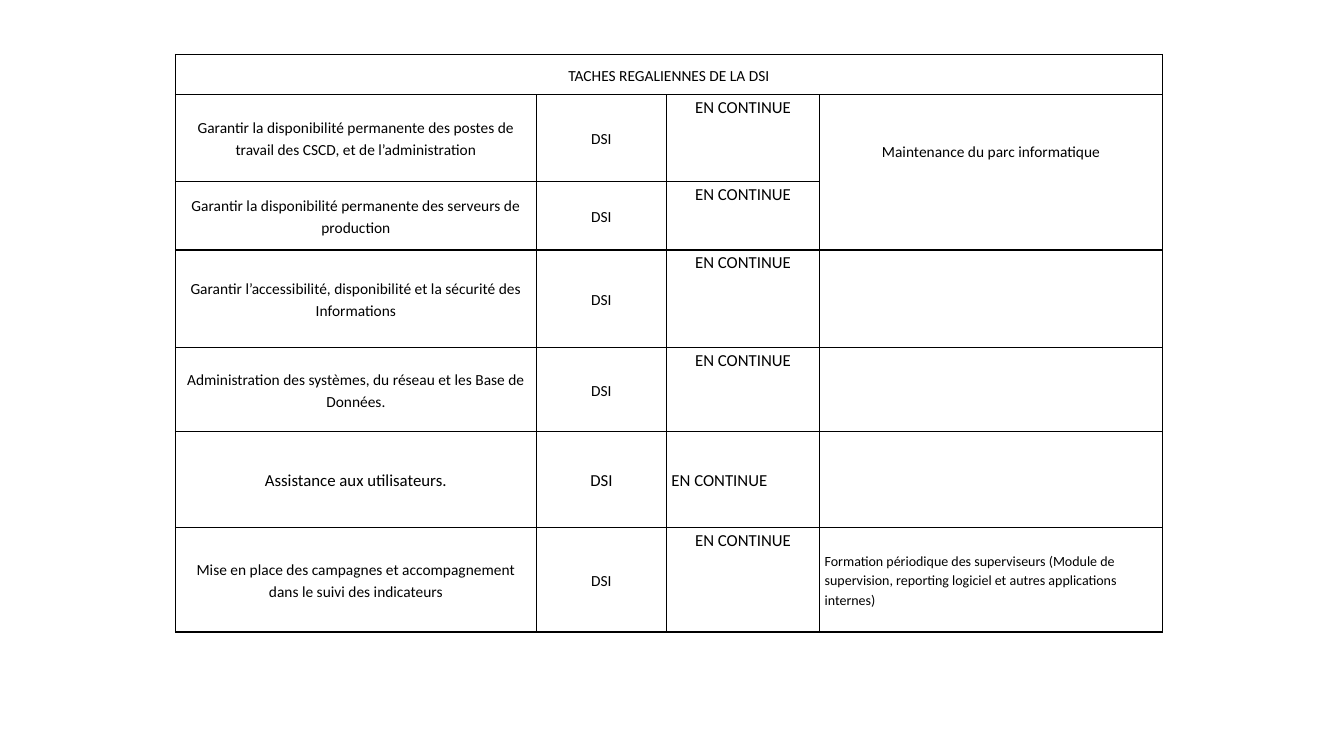
"""Build the slide listing the standing tasks of the DSI."""
from lxml.etree import SubElement as Sub
from pptx import Presentation
from pptx.dml.color import RGBColor as Rgb
from pptx.enum.text import MSO_ANCHOR as Anchor, PP_ALIGN as Align
from pptx.oxml.ns import qn
from pptx.util import Inches, Pt

HUES = {"ink": "000000", "paper": "FFFFFF"}
FONT = "Calibri"
HEAD = "TACHES REGALIENNES DE LA DSI"
OWNER = "DSI"
TIME = "EN CONTINUE"
TASKS = [
    "Garantir la disponibilité permanente des postes de travail des CSCD, et de l’administration",
    "Garantir la disponibilité permanente des serveurs de production",
    "Garantir l’accessibilité, disponibilité et la sécurité des Informations",
    "Administration des systèmes, du réseau et les Base de Données.",
    "Assistance aux utilisateurs.",
    "Mise en place des campagnes et accompagnement dans le suivi des indicateurs",
]
UPKEEP = "Maintenance du parc informatique"
COURSE = ("Formation périodique des superviseurs (Module de supervision, "
          "reporting logiciel et autres applications internes)")
HELP, LAST = 5, 6
COLS = [3.58, 1.29, 1.52, 3.4]
ROWS = [0.4, 0.86, 0.68, 0.97, 0.83, 0.95, 1.04]
LEFT, TOP = 1.74, 0.54


def frame(cell):
    """Give a cell its borders, fill and margins."""
    props = cell._tc.get_or_add_tcPr()
    for side in ("lnL", "lnR", "lnT", "lnB"):
        line = Sub(props, qn("a:" + side), w=str(Pt(1)))
        fill = Sub(line, qn("a:solidFill"))
        Sub(fill, qn("a:srgbClr"), val=HUES["ink"])
    cell.fill.solid()
    cell.fill.fore_color.rgb = Rgb.from_string(HUES["paper"])
    cell.margin_left = cell.margin_right = Inches(0.05)
    cell.margin_top = cell.margin_bottom = 0


def write(cell, text, size=11, align=Align.CENTER, anchor=Anchor.MIDDLE, after=0):
    """Put one run of text into a cell."""
    cell.vertical_anchor = anchor
    para = cell.text_frame.paragraphs[0]
    para.alignment = align
    para.line_spacing = 1.15
    para.space_after = Pt(after)
    run = para.add_run()
    run.text = text
    run.font.name = FONT
    run.font.size = Pt(size)
    run.font.color.rgb = Rgb.from_string(HUES["ink"])


def main():
    """Draw the table and save the deck."""
    deck = Presentation()
    deck.slide_width, deck.slide_height = Inches(13.33), Inches(7.5)
    slide = deck.slides.add_slide(deck.slide_layouts[6])
    grid = slide.shapes.add_table(
        len(ROWS), len(COLS), Inches(LEFT), Inches(TOP),
        Inches(sum(COLS)), Inches(sum(ROWS))).table
    grid.first_row = grid.horz_banding = False
    for col, width in zip(grid.columns, COLS):
        col.width = Inches(width)
    for row, height in zip(grid.rows, ROWS):
        row.height = Inches(height)
    for cell in grid.iter_cells():
        frame(cell)

    grid.cell(0, 0).merge(grid.cell(0, 3))
    grid.cell(1, 3).merge(grid.cell(2, 3))
    write(grid.cell(0, 0), HEAD)
    for row, task in enumerate(TASKS, 1):
        size = 12 if row == HELP else 11
        write(grid.cell(row, 0), task, size)
        write(grid.cell(row, 1), OWNER, size)
        if row == HELP:
            write(grid.cell(row, 2), TIME, 12, Align.JUSTIFY)
        else:
            write(grid.cell(row, 2), TIME, 12, anchor=Anchor.TOP, after=10)

    write(grid.cell(1, 3), UPKEEP)
    grid.cell(1, 3).margin_bottom = Inches(0.43)
    write(grid.cell(LAST, 3), COURSE, 10, Align.LEFT, after=10)
    deck.save("out.pptx")


if __name__ == "__main__":
    main()
